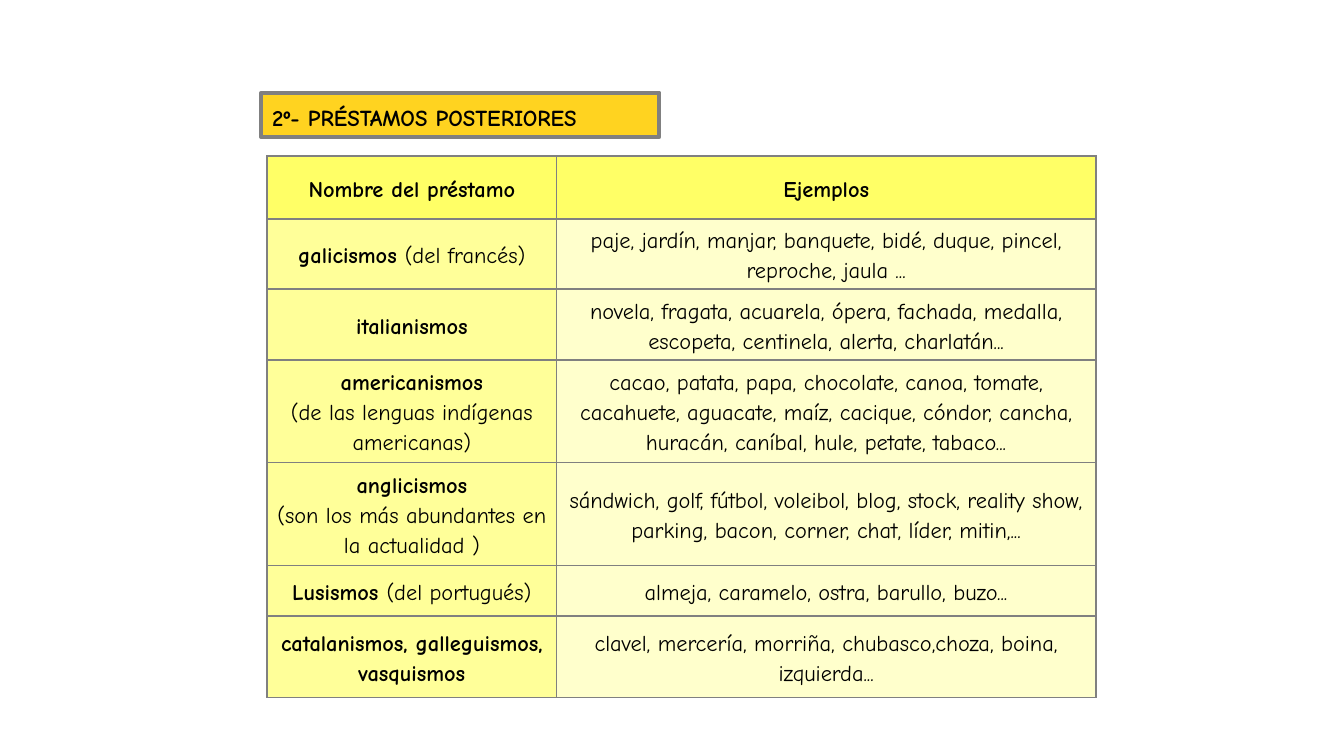
"""Build a slide with a table of later loanwords in Spanish."""
from dataclasses import dataclass

from lxml import etree
from pptx import Presentation
from pptx.dml.color import RGBColor
from pptx.enum.shapes import MSO_SHAPE
from pptx.enum.text import MSO_ANCHOR, PP_ALIGN
from pptx.oxml.ns import qn
from pptx.util import Inches, Length, Pt

RECTANGLE = MSO_SHAPE.RECTANGLE
TOP, MIDDLE = MSO_ANCHOR.TOP, MSO_ANCHOR.MIDDLE
LEFT, CENTER = PP_ALIGN.LEFT, PP_ALIGN.CENTER

SLIDE_WIDTH, SLIDE_HEIGHT = Inches(13.33), Inches(7.5)
FONT = "Comic Neue"
BLACK, GRAY, GOLD = "000000", "808080", "FFD320"
HEADER_FILL, NAME_FILL, EXAMPLE_FILL = "FFFF66", "FFFF99", "FFFFCC"
LINE_SPACING = 1.17
TITLE_SIZE, TABLE_SIZE = 16.3, 16
TITLE_BORDER, CELL_BORDER = 2.83, 1.42

TITLE = "2º- PRÉSTAMOS POSTERIORES"
TITLE_LEFT, TITLE_TOP, TITLE_WIDTH, TITLE_HEIGHT = 19.43, 12.27, 29.63, 5.87
TABLE_LEFT, TABLE_TOP = 19.88, 20.67
COLUMN_SHARES = (21.53, 40.13)


@dataclass(frozen=True)
class Run:
    text: str
    bold: bool = False


@dataclass(frozen=True)
class Loan:
    height_share: float
    name: list[list[Run]]
    examples: list[list[Run]]
    name_fill: str = NAME_FILL
    example_fill: str = EXAMPLE_FILL


LOANS = [
    Loan(8.27, [[Run("Nombre del préstamo", True)]], [[Run("Ejemplos", True)]],
         HEADER_FILL, HEADER_FILL),
    Loan(9.33, [[Run("galicismos ", True), Run("(del francés)")]],
         [[Run("paje, jardín, manjar, banquete, bidé, duque, pincel, "
               "reproche, jaula ...")]]),
    Loan(9.33, [[Run("italianismos", True)]],
         [[Run("novela, fragata, acuarela, ópera, fachada, medalla, "
               "escopeta, centinela, alerta, charlatán...")]]),
    Loan(13.6, [[Run("americanismos", True)],
                [Run("(de las lenguas indígenas americanas)")]],
         [[Run("cacao, patata, papa, chocolate, canoa, tomate, cacahuete, "
               "aguacate, maíz, cacique, cóndor, cancha, huracán, caníbal, "
               "hule, petate, tabaco...")]]),
    Loan(13.6, [[Run("anglicismos", True)],
                [Run("(son los más abundantes en la actualidad )")]],
         [[Run("sándwich, golf, fútbol, voleibol, blog, stock, reality show, "
               "parking, bacon, corner, chat, líder, mitin,...")]]),
    Loan(6.67, [[Run("Lusismos ", True), Run("(del portugués)")]],
         [[Run("almeja, caramelo, ostra, barullo, buzo...")]]),
    Loan(10.8, [[Run("catalanismos, galleguismos, vasquismos", True)]],
         [[Run("clavel, mercería, morriña, chubasco,choza, boina, "
               "izquierda...")]]),
]


def across(share: float) -> Length:
    return Length(round(SLIDE_WIDTH * share / 100))


def down(share: float) -> Length:
    return Length(round(SLIDE_HEIGHT * share / 100))


def color(hex_value: str) -> RGBColor:
    return RGBColor.from_string(hex_value)


def set_format(target, values: dict) -> None:
    for name, value in values.items():
        setattr(target, name, value)


def paint(fill, hex_value: str) -> None:
    fill.solid()
    fill.fore_color.rgb = color(hex_value)


def write(text_frame, paragraphs: list[list[Run]], size: float, alignment) -> None:
    text_frame.word_wrap = True
    for index, runs in enumerate(paragraphs):
        paragraph = text_frame.add_paragraph() if index else text_frame.paragraphs[0]
        set_format(paragraph, {"alignment": alignment, "line_spacing": LINE_SPACING})
        for item in runs:
            run = paragraph.add_run()
            run.text = item.text
            set_format(run.font, {"name": FONT, "size": Pt(size), "bold": item.bold})
            run.font.color.rgb = color(BLACK)


def add_borders(cell) -> None:
    properties = cell._tc.get_or_add_tcPr()
    for position, side in enumerate(("lnL", "lnR", "lnT", "lnB")):
        line = etree.Element(qn(f"a:{side}"), w=str(Pt(CELL_BORDER)))
        fill = etree.SubElement(line, qn("a:solidFill"))
        etree.SubElement(fill, qn("a:srgbClr"), val=GRAY)
        properties.insert(position, line)


def add_title(slide) -> None:
    shape = slide.shapes.add_shape(
        RECTANGLE, across(TITLE_LEFT), down(TITLE_TOP),
        across(TITLE_WIDTH), down(TITLE_HEIGHT))
    shape.shadow.inherit = False
    paint(shape.fill, GOLD)
    paint(shape.line.fill, GRAY)
    shape.line.width = Pt(TITLE_BORDER)
    set_format(shape.text_frame, {
        "vertical_anchor": TOP,
        "margin_left": Inches(0.11), "margin_right": Inches(0.11),
        "margin_top": Inches(0.06), "margin_bottom": Inches(0.06)})
    write(shape.text_frame, [[Run(TITLE, True)]], TITLE_SIZE, LEFT)


def fill_cell(cell, paragraphs: list[list[Run]], fill: str) -> None:
    margin = Inches(0.04)
    set_format(cell, {
        "vertical_anchor": MIDDLE, "margin_left": margin, "margin_right": margin,
        "margin_top": margin, "margin_bottom": margin})
    paint(cell.fill, fill)
    add_borders(cell)
    write(cell.text_frame, paragraphs, TABLE_SIZE, CENTER)


def add_loan_table(slide) -> None:
    table = slide.shapes.add_table(
        len(LOANS), len(COLUMN_SHARES), across(TABLE_LEFT), down(TABLE_TOP),
        across(sum(COLUMN_SHARES)),
        down(sum(loan.height_share for loan in LOANS))).table
    set_format(table, {"first_row": False, "horz_banding": False})
    for column, share in zip(table.columns, COLUMN_SHARES):
        column.width = across(share)
    for row, loan in zip(table.rows, LOANS):
        row.height = down(loan.height_share)
        name_cell, example_cell = row.cells
        fill_cell(name_cell, loan.name, loan.name_fill)
        fill_cell(example_cell, loan.examples, loan.example_fill)


def main() -> None:
    presentation = Presentation()
    set_format(presentation, {"slide_width": SLIDE_WIDTH, "slide_height": SLIDE_HEIGHT})
    slide = presentation.slides.add_slide(presentation.slide_layouts[6])
    add_loan_table(slide)
    add_title(slide)
    presentation.save("out.pptx")


if __name__ == "__main__":
    main()
